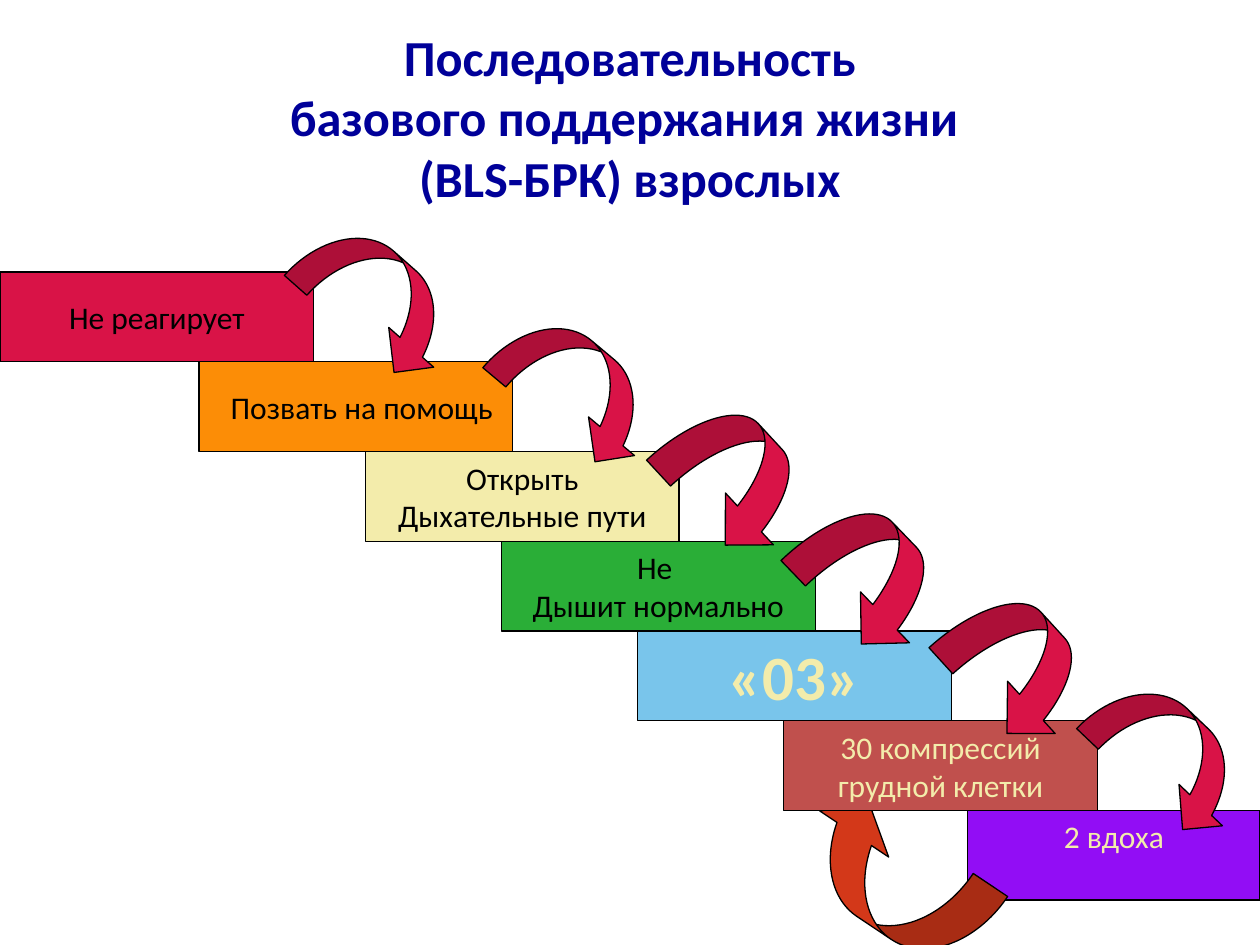
from pptx import Presentation
from pptx.dml.color import RGBColor
from pptx.enum.shapes import MSO_SHAPE
from pptx.enum.text import MSO_ANCHOR, MSO_AUTO_SIZE, PP_ALIGN
from pptx.util import Inches, Pt

BLACK = RGBColor(0x00, 0x00, 0x00)
NAVY = RGBColor(0x00, 0x00, 0x99)
CREAM = RGBColor(0xF3, 0xEC, 0xAB)
CRIMSON = RGBColor(0xD9, 0x13, 0x47)
ORANGE = RGBColor(0xFC, 0x8D, 0x06)
GREEN = RGBColor(0x2A, 0xAE, 0x37)
SKY = RGBColor(0x79, 0xC5, 0xEB)
BRICK = RGBColor(0xC0, 0x50, 0x4D)
VIOLET = RGBColor(0x92, 0x0D, 0xF5)
RUST = RGBColor(0xD3, 0x38, 0x19)

# Grid: ten one-inch columns; the staircase rows start below the title
COLUMN, ROW, STAIRS_TOP = 1.0, 0.712, 2.16
STEP_WIDTH = 2.49

# Arrow sizes in columns and rows
WIDE, TIGHT, RETURN = (1.4, 1.01), (1.2, 1.19), (1.65, 1.12)
FORWARD_BEND = (0.331, 0.662, 0.333)
RETURN_BEND = (0.413, 0.825, 0.333)

# Lines, left column, fill, text format
STEPS = [
    (["Не реагирует"], 0, CRIMSON, {}),
    (["Позвать на помощь"], 1.58, ORANGE, {}),
    (["Открыть", "Дыхательные пути"], 2.9, CREAM, {}),
    (["Не ", "Дышит нормально"], 3.98, GREEN, {}),
    (["«03»"], 5.06, SKY, {"size": Pt(36), "bold": True, "color": CREAM}),
    (["30 компрессий", "грудной клетки"], 6.22, BRICK, {"color": CREAM}),
]

# Arrow after each step: size, columns past its right edge, row in it, angle
TURNS = [
    (WIDE, 0.53, 0.31, 41.5),
    (WIDE, 0.53, 0.31, 40),
    (TIGHT, 0.46, 0.31, 47.2),
    (TIGHT, 0.45, 0.41, 46.1),
    (TIGHT, 0.54, 0.41, 47.7),
    (WIDE, 0.59, 0.4, 43.6),
]


class StairSlide:
    def __init__(self, slide):
        self.slide = slide
        self.text_format = {"name": "Calibri", "size": Pt(18),
                            "bold": False, "color": BLACK}

    def format_text(self, frame, **changes):
        for paragraph in frame.paragraphs:
            paragraph.alignment = PP_ALIGN.CENTER
            for key, value in {**self.text_format, **changes}.items():
                if key == "color":
                    paragraph.font.color.rgb = value
                else:
                    setattr(paragraph.font, key, value)

    def title(self, text, left, top, width, height):
        heading = self.slide.shapes.title
        box = {"left": left, "top": top, "width": width, "height": height}
        for key, value in box.items():
            setattr(heading, key, Inches(value))
        frame = heading.text_frame
        frame.text = text
        frame.auto_size = MSO_AUTO_SIZE.NONE
        frame.vertical_anchor = MSO_ANCHOR.MIDDLE
        self.format_text(frame, size=Pt(28.8), bold=True, color=NAVY)

    def outlined(self, kind, column, row, columns, rows, fill):
        shape = self.slide.shapes.add_shape(
            kind, Inches(column * COLUMN), Inches(STAIRS_TOP + row * ROW),
            Inches(columns * COLUMN), Inches(rows * ROW))
        shape.shadow.inherit = False
        shape.fill.solid()
        shape.fill.fore_color.rgb = fill
        shape.line.color.rgb = BLACK
        shape.line.width = Pt(0.75)
        return shape

    def step(self, lines, column, row, fill, width=STEP_WIDTH,
             anchor=MSO_ANCHOR.MIDDLE, **text_format):
        block = self.outlined(MSO_SHAPE.RECTANGLE, column, row, width, 1, fill)
        frame = block.text_frame
        frame.text = "\n".join(lines)
        frame.word_wrap = True
        frame.vertical_anchor = anchor
        self.format_text(frame, **text_format)
        return block

    def arrow(self, size, center_column, center_row, angle, fill, bend):
        columns, rows = size
        curve = self.outlined(
            MSO_SHAPE.CURVED_DOWN_ARROW, center_column - columns / 2,
            center_row - rows / 2, columns, rows, fill)
        curve.rotation = angle
        for index, value in enumerate(bend):
            curve.adjustments[index] = value


def main():
    deck = Presentation()
    deck.slide_width, deck.slide_height = Inches(10), Inches(7.5)
    stairs = StairSlide(deck.slides.add_slide(deck.slide_layouts[5]))

    # Heading
    stairs.title("Последовательность\vбазового поддержания жизни \v"
                 "(BLS-БРК) взрослых", 0.5, 0.3, 9, 1.25)

    # Last step and the arrow back to compressions, behind the staircase
    stairs.step(["2 вдоха"], 7.68, len(STEPS), VIOLET, width=2.32,
                anchor=MSO_ANCHOR.TOP, color=CREAM)
    stairs.arrow(RETURN, 7.09, 6.78, 213.8, RUST, RETURN_BEND)

    # Staircase
    blocks = [stairs.step(lines, column, row, fill, **text_format)
              for row, (lines, column, fill, text_format) in enumerate(STEPS)]
    blocks[1].text_frame.margin_left = Inches(0.19)

    # Arrows from each step to the next
    for row, (step, turn) in enumerate(zip(STEPS, TURNS)):
        size, past_edge, row_share, angle = turn
        stairs.arrow(size, step[1] + STEP_WIDTH + past_edge, row + row_share,
                     angle, CRIMSON, FORWARD_BEND)

    deck.save("out.pptx")


if __name__ == "__main__":
    main()
